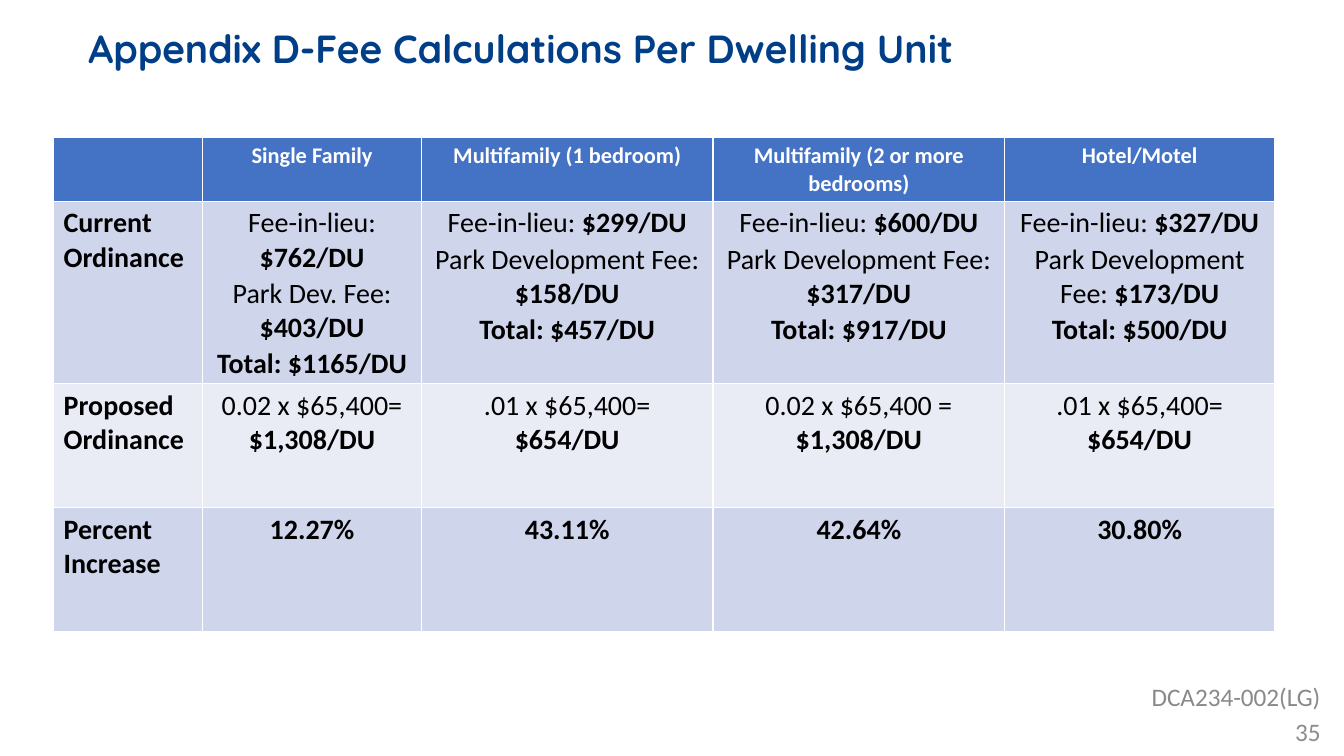
from pptx import Presentation
from pptx.dml.color import RGBColor
from pptx.enum.text import MSO_ANCHOR as Anchor, PP_ALIGN as Align
from pptx.util import Cm, Pt

NAVY, BLUE, WHITE, BLACK = "003F88", "4472C4", "FFFFFF", "000000"
BANDS = ["CFD5EA", "E9EBF5", "CFD5EA"]
COL_WIDTHS = [3.76, 5.51, 7.35, 7.35, 6.8]
ROW_HEIGHTS = [1.57, 4.6, 3.12, 3.12]

# One line per dwelling type:
# name, fee-in-lieu, park fee label, park fee, total, formula, new fee, increase
DWELLINGS = [
    ("Single Family", "$762", "Park Dev. Fee: ", "$403", "$1165",
     "0.02 x $65,400=", "$1,308", "12.27%"),
    ("Multifamily (1 bedroom)", "$299", "Park Development Fee: ", "$158", "$457",
     ".01 x $65,400=", "$654", "43.11%"),
    ("Multifamily (2 or more bedrooms)", "$600", "Park Development Fee: ", "$317",
     "$917", "0.02 x $65,400 =", "$1,308", "42.64%"),
    ("Hotel/Motel", "$327", "Park Development Fee: ", "$173", "$500",
     ".01 x $65,400=", "$654", "30.80%"),
]


def rgb(value):
    return RGBColor.from_string(value)


def style(font, size, color, bold=False, name="Calibri"):
    font.name, font.size, font.bold = name, Pt(size), bold
    font.color.rgb = rgb(color)


def add_text(slide, text, left, top, width, height, size, color,
             align=Align.LEFT, anchor=Anchor.TOP, bold=False, name="Calibri"):
    sp = slide.shapes.add_textbox(Cm(left), Cm(top), Cm(width), Cm(height))
    tf = sp.text_frame
    tf.word_wrap = True
    tf.vertical_anchor = anchor
    p = tf.paragraphs[0]
    p.text = text
    p.alignment = align
    style(p.font, size, color, bold, name)
    return p


def fill_cell(cell, fill, lines, size=20, color=BLACK, align=Align.CENTER, gap=0):
    """Each line is a (plain text, bold text) pair."""
    cell.fill.solid()
    cell.fill.fore_color.rgb = rgb(fill)
    tf = cell.text_frame
    for i, (plain, strong) in enumerate(lines):
        p = tf.add_paragraph() if i else tf.paragraphs[0]
        p.alignment = align
        if i and gap:
            p.space_before = Pt(gap)
        for text, bold in ((plain, False), (strong, True)):
            if text:
                r = p.add_run()
                r.text = text
                style(r.font, size, color, bold)


def add_fee_table(slide):
    frame = slide.shapes.add_table(
        len(ROW_HEIGHTS), len(COL_WIDTHS), Cm(1.35), Cm(3.46),
        Cm(sum(COL_WIDTHS)), Cm(sum(ROW_HEIGHTS)))
    table = frame.table
    for col, width in zip(table.columns, COL_WIDTHS):
        col.width = Cm(width)
    for row, height in zip(table.rows, ROW_HEIGHTS):
        row.height = Cm(height)

    # Row labels
    fill_cell(table.cell(0, 0), BLUE, [])
    labels = ["Current Ordinance", "Proposed Ordinance", "Percent Increase"]
    for i, (label, band) in enumerate(zip(labels, BANDS), 1):
        fill_cell(table.cell(i, 0), band, [("", label)], align=Align.LEFT)

    # One column per dwelling type
    for c, dwelling in enumerate(DWELLINGS, 1):
        name, lieu, park_label, park, total, formula, new_fee, increase = dwelling
        fill_cell(table.cell(0, c), BLUE, [("", name)], 16, WHITE)
        current = [("Fee-in-lieu: ", f"{lieu}/DU"), (park_label, f"{park}/DU"),
                   ("", f"Total: {total}/DU")]
        fill_cell(table.cell(1, c), BANDS[0], current, gap=1.4)
        fill_cell(table.cell(2, c), BANDS[1], [(formula, ""), ("", f"{new_fee}/DU")])
        fill_cell(table.cell(3, c), BANDS[2], [("", increase)])


def main():
    prs = Presentation()
    prs.slide_width, prs.slide_height = Cm(33.87), Cm(19.05)
    s = prs.slides.add_slide(prs.slide_layouts[6])

    # Title
    title = add_text(s, "Appendix D-Fee Calculations Per Dwelling Unit",
                     1.98, 0.81, 23.52, 1.96, 28, NAVY, bold=True, name="Quicksand")
    title.line_spacing = 0.7

    # Fees
    add_fee_table(s)

    # Page number and document code
    add_text(s, "35", 25.91, 17.93, 7.62, 1.02, 18, "8C8C8C",
             Align.RIGHT, Anchor.MIDDLE)
    add_text(s, "DCA234-002(LG)", 27.97, 17.04, 5.56, 1.02, 18, "898989", Align.RIGHT)

    prs.save("out.pptx")


if __name__ == "__main__":
    main()
